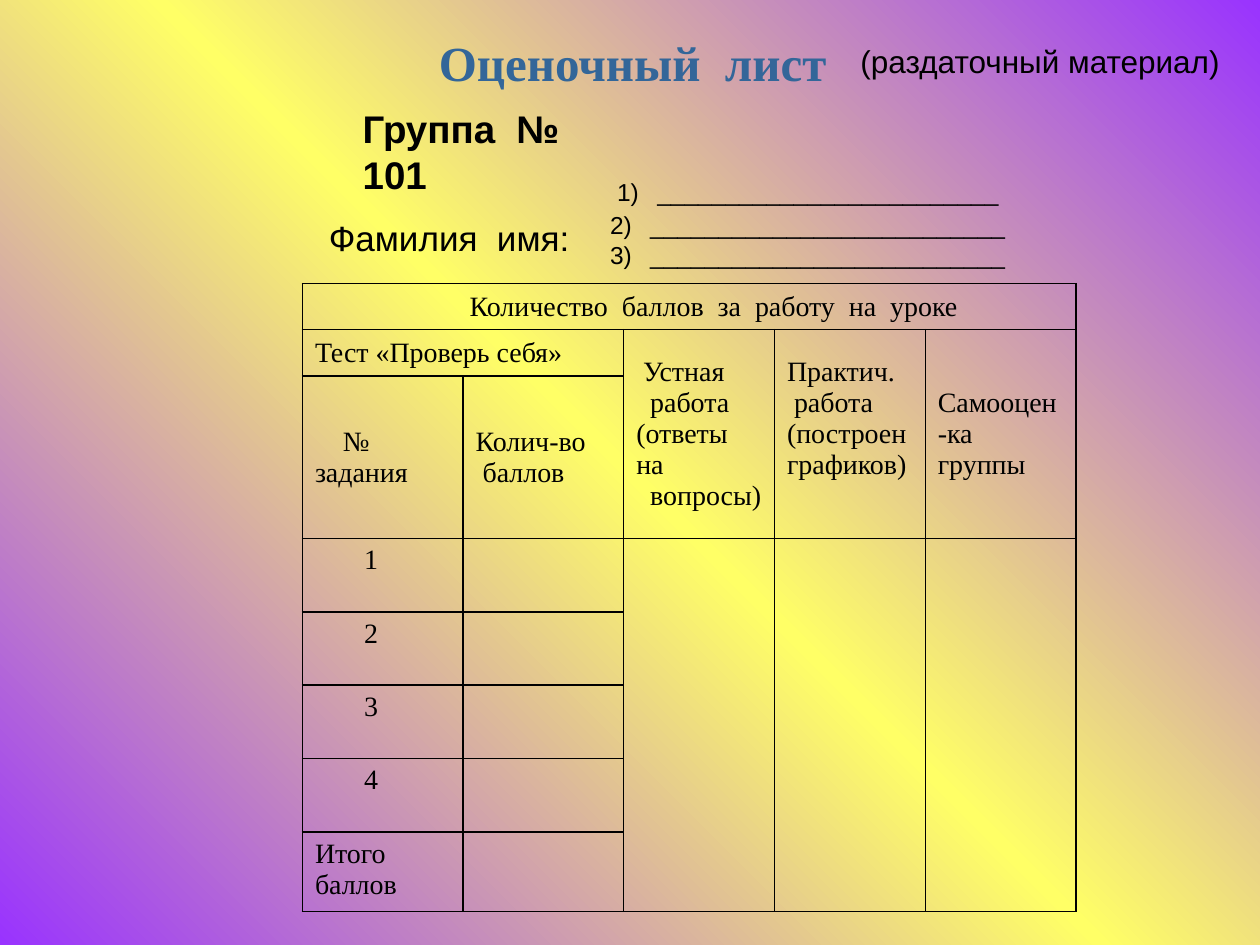
"""Builds the group score sheet slide with its heading, name lines and score table."""
import copy

import pptx
import pptx.dml.color
import pptx.enum.text
import pptx.oxml.ns
import pptx.util
from lxml import etree

Pt = pptx.util.Pt
ALIGN = pptx.enum.text.PP_ALIGN
ANCHOR = pptx.enum.text.MSO_ANCHOR
COLORS = {"edge": "9933FF", "band": "FFFF66", "heading": "336699", "ink": "000000"}
SANS, SERIF = "Arial", "Times New Roman"

COLUMN_WIDTHS = [91.8] * 2 + [86.2] * 3
ROW_HEIGHTS = [26.4, 26.4, 92.9] + [41.9] * 4 + [45.4]
MERGES = [((0, 0), (0, 4)), ((1, 0), (1, 1))] + [
    ((top, column), (bottom, column))
    for column in (2, 3, 4) for top, bottom in ((1, 2), (3, 7))
]
HEADERS = {
    (1, 0): [("Тест «Проверь себя»", 0)],
    (1, 2): [("Устная", 4), ("работа", 8), ("(ответы на", 0), ("вопросы)", 8)],
    (1, 3): [("Практич.", 0), ("работа", 4), ("(построен", 0), ("графиков)", 0)],
    (1, 4): [("Самооцен-ка группы", 0)],
    (2, 0): [("№ задания", 16)],
    (2, 1): [("Колич-во", 0), ("баллов", 4)],
}


def add_child(parent, tag, **attributes):
    """Append a DrawingML element to parent."""
    return etree.SubElement(parent, pptx.oxml.ns.qn(tag), **attributes)


def style(paragraph, size, face, color="ink", bold=False):
    """Set the font of a whole paragraph."""
    font = paragraph.font
    font.size, font.name, font.bold = Pt(size), face, bold
    font.color.rgb = pptx.dml.color.RGBColor.from_string(COLORS[color])


def indent(paragraph, margin=0, first=0):
    """Set the left margin and first-line indent in points."""
    properties = paragraph._p.get_or_add_pPr()
    properties.set("marL", str(Pt(margin)))
    properties.set("indent", str(Pt(first)))


def paint_background(slide):
    """Fill the background with a diagonal gradient of three stops."""
    fill = slide.background.fill
    fill.gradient()
    fill.gradient_angle = 45
    first = fill.gradient_stops[0]._gs
    first.addnext(copy.deepcopy(first))
    for stop, position, color in zip(fill.gradient_stops, (0, 0.5, 1), ("edge", "band", "edge")):
        stop.position = position
        stop.color.rgb = pptx.dml.color.RGBColor.from_string(COLORS[color])


def set_heading(slide):
    """Place and format the slide title."""
    heading = slide.shapes.title
    heading.left, heading.top, heading.width, heading.height = Pt(241.5), Pt(15.1), Pt(240), Pt(36)
    frame = heading.text_frame
    frame.text = "Оценочный  лист"
    frame.margin_left = frame.margin_right = 0
    frame.word_wrap = False
    frame.auto_size = pptx.enum.text.MSO_AUTO_SIZE.NONE
    frame.vertical_anchor = ANCHOR.TOP
    frame.paragraphs[0].alignment = ALIGN.CENTER
    style(frame.paragraphs[0], 28, SERIF, "heading", True)


def add_text(slide, left, top, width, height, wrap=True):
    """Add a text box and return its text frame."""
    frame = slide.shapes.add_textbox(Pt(left), Pt(top), Pt(width), Pt(height)).text_frame
    frame.word_wrap = wrap
    return frame


def add_handout_note(slide):
    """Add the remark beside the title."""
    note = add_text(slide, 484.6, 20.2, 221.8, 28.8, wrap=False)
    note.text = "(раздаточный материал)"
    style(note.paragraphs[0], 18, SANS)


def add_group_details(slide):
    """Add the group number and the label for the names."""
    details = add_text(slide, 150.5, 56.2, 190, 67)
    group, label = details.paragraphs[0], details.add_paragraph()
    group.text = "Группа  № 101"
    indent(group, 49.7)
    style(group, 22, SANS, bold=True)
    label.text = "Фамилия  имя:"
    label.space_before = Pt(11)
    indent(label, 30.3)
    style(label, 20, SANS)


def add_name_lines(slide):
    """Add the numbered lines for names."""
    names = add_text(slide, 341.5, 97.8, 268.4, 58)
    for number, length in enumerate((25, 26, 26), 1):
        name_line = names.add_paragraph() if number > 1 else names.paragraphs[0]
        name_line.text = f"{number})\t" + "_" * length
        indent(name_line, 27 if number == 1 else 23, -23)
        name_line.space_after = Pt(2 if number == 1 else 0)
        style(name_line, 14, SANS)


def fill_cell(cell, lines, anchor=ANCHOR.MIDDLE):
    """Write lines of text, each with its first-line indent, into a cell."""
    cell.vertical_anchor = anchor
    for index, (text, first) in enumerate(lines):
        frame = cell.text_frame
        paragraph = frame.add_paragraph() if index else frame.paragraphs[0]
        paragraph.text = text
        indent(paragraph, first=first)
        style(paragraph, 16, SERIF)


def clear_and_rule(cell):
    """Give a cell thin borders and no fill."""
    properties = cell._tc.get_or_add_tcPr()
    for side in ("a:lnL", "a:lnR", "a:lnT", "a:lnB"):
        border = add_child(properties, side, w=str(Pt(1)))
        add_child(add_child(border, "a:solidFill"), "a:srgbClr", val=COLORS["ink"])
    cell.fill.background()


def add_score_table(slide):
    """Add the table of scores for the lesson."""
    scores = slide.shapes.add_table(
        len(ROW_HEIGHTS), len(COLUMN_WIDTHS), Pt(172.8), Pt(162),
        Pt(sum(COLUMN_WIDTHS)), Pt(sum(ROW_HEIGHTS))).table
    scores.first_row = scores.horz_banding = False
    for column, width in zip(scores.columns, COLUMN_WIDTHS):
        column.width = Pt(width)
    for row, height in zip(scores.rows, ROW_HEIGHTS):
        row.height = Pt(height)
    for cell in scores.iter_cells():
        clear_and_rule(cell)
    for start, end in MERGES:
        scores.cell(*start).merge(scores.cell(*end))

    caption = scores.cell(0, 0)
    fill_cell(caption, [("Количество  баллов  за  работу  на  уроке", 28)])
    caption.text_frame.paragraphs[0].alignment = ALIGN.CENTER
    for position, lines in HEADERS.items():
        fill_cell(scores.cell(*position), lines)
    scores.cell(1, 3).margin_bottom = Pt(21.6)
    for task in range(1, 5):
        fill_cell(scores.cell(task + 2, 0), [(str(task), 28)], ANCHOR.TOP)
    fill_cell(scores.cell(7, 0), [("Итого баллов", 0)], ANCHOR.TOP)


def main():
    """Build and save the slide."""
    deck = pptx.Presentation()
    deck.slide_width, deck.slide_height = Pt(720), Pt(540)
    slide = deck.slides.add_slide(deck.slide_layouts[5])
    paint_background(slide)
    add_group_details(slide)
    add_name_lines(slide)
    add_score_table(slide)
    set_heading(slide)
    add_handout_note(slide)
    deck.save("out.pptx")


if __name__ == "__main__":
    main()
